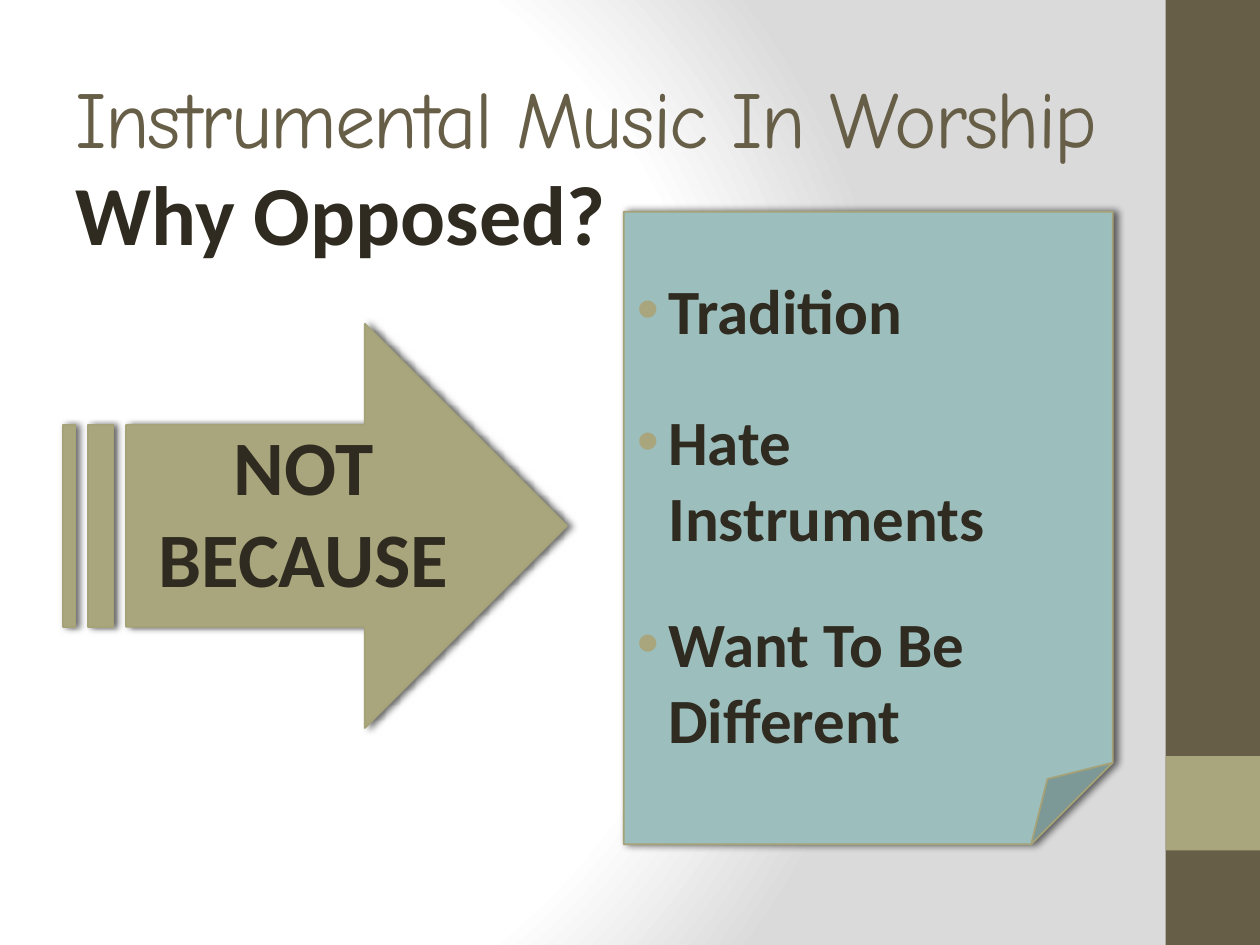
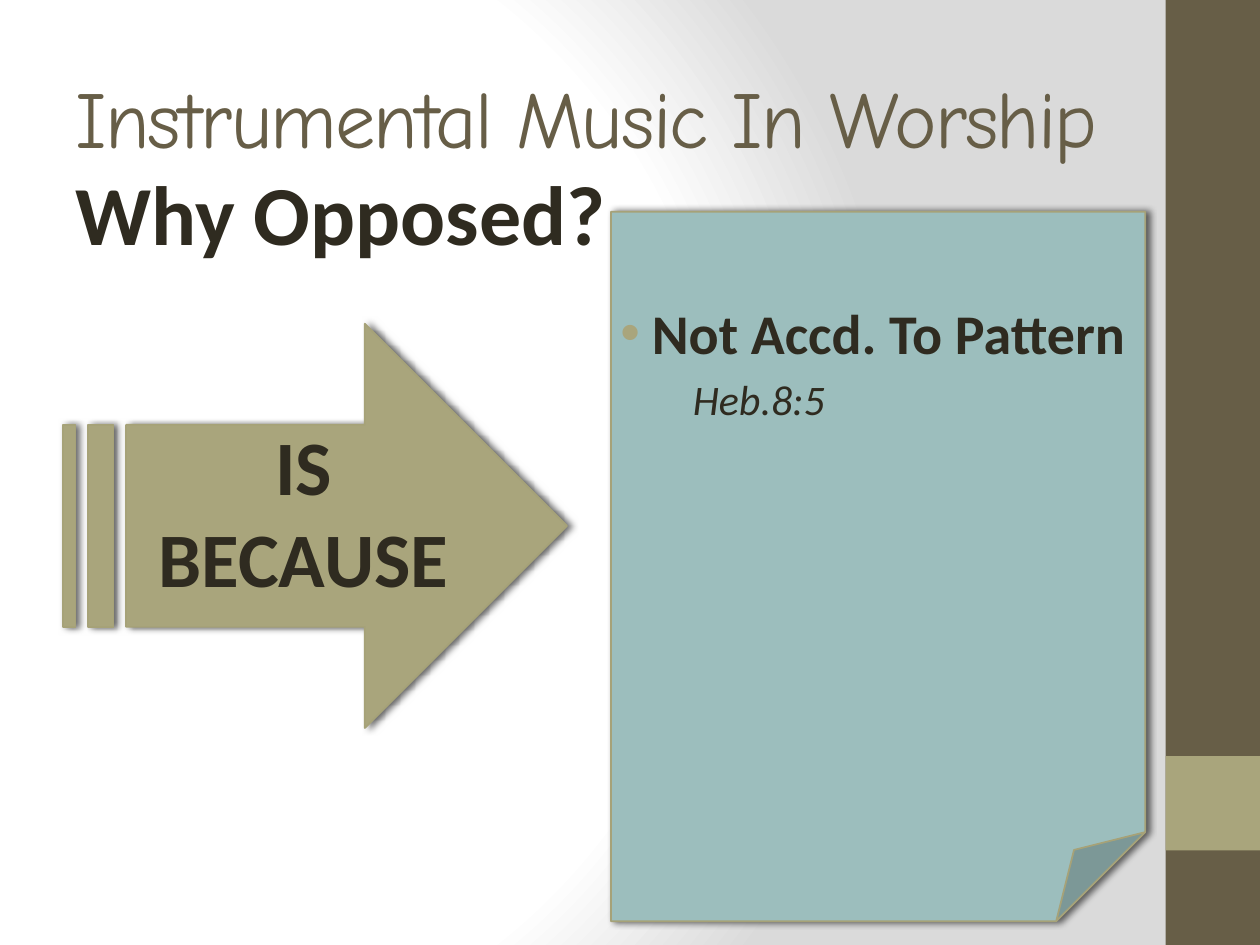
from lxml.etree import SubElement
from pptx import Presentation
from pptx.dml.color import RGBColor
from pptx.enum.shapes import MSO_SHAPE
from pptx.enum.text import MSO_ANCHOR, PP_ALIGN
from pptx.oxml import parse_xml
from pptx.oxml.ns import qn
from pptx.util import Pt

DARK_OLIVE = RGBColor(0x67, 0x5E, 0x47)
OLIVE = RGBColor(0xA9, 0xA5, 0x7C)
OUTLINE = RGBColor(0xA6, 0xA2, 0x78)
TEAL = RGBColor(0x9C, 0xBE, 0xBD)
INK = RGBColor(0x2F, 0x2B, 0x20)
BODY_FONT = "Calibri"
TITLE_FONT = "Comic Neue"

TITLE = "Instrumental Music In Worship"
QUESTION = "Why Opposed?"
SLIDES = [
    {
        "arrow": ["NOT", "BECAUSE"],
        "note": (356.4, 121, 279.4, 361.4),
        "reasons_box": (347.8, 121, 288, 361.4),
        "top_inset": 34,
        "reasons": [("Tradition", 36, 0), ("Hate Instruments", 36, 32),
                    ("Want To Be Different", 36, 29)],
        "reference": None,
    },
    {
        "arrow": ["IS", "BECAUSE"],
        "note": (349.2, 121, 305.3, 405.4),
        "reasons_box": (338.4, 121, 319, 405.4),
        "top_inset": 49.5,
        "reasons": [("Not Accd. To Pattern", 32, 0)],
        "reference": ("Heb.8:5", 24, 4.8),
    },
]

SLIDE_WIDTH, SLIDE_HEIGHT = 720, 540
BAND_WIDTH = 54
BAND_LEFT = SLIDE_WIDTH - BAND_WIDTH
BANDS = [((BAND_LEFT, 0, BAND_WIDTH, SLIDE_HEIGHT), DARK_OLIVE),
         ((BAND_LEFT, 432, BAND_WIDTH, BAND_WIDTH), OLIVE)]
TITLE_BOX = (36, 21.6, 600, 90)
QUESTION_BOX = (36, 88.6, 327.6, 65.5)
ARROW = (36, 185, 288, 231)
ARROW_TEXT_BOX = (72, 235.4, 203, 113.8)

DRAWING = 'xmlns:a="http://schemas.openxmlformats.org/drawingml/2006/main"'
GRADIENT_STOPS = [(0, "FFFFFF"), (75, "FFFFFF"), (100, "DADADA")]


def paint_background(slide):
    fill = slide.background.fill
    fill.gradient()
    gradient = slide.background._cSld.find(".//" + qn("a:gradFill"))
    stops = "".join(f'<a:gs pos="{pos * 1000}"><a:srgbClr val="{color}"/></a:gs>'
                    for pos, color in GRADIENT_STOPS)
    radial = parse_xml(
        f'<a:gradFill {DRAWING} rotWithShape="1"><a:gsLst>{stops}</a:gsLst>'
        '<a:path path="circle">'
        '<a:fillToRect l="20000" t="50000" r="100000" b="50000"/>'
        '</a:path></a:gradFill>')
    gradient.getparent().replace(gradient, radial)


def add_filled(slide, kind, box, color):
    shape = slide.shapes.add_shape(kind, *map(Pt, box))
    shape.shadow.inherit = False
    shape.fill.solid()
    shape.fill.fore_color.rgb = color
    shape.line.fill.background()
    return shape


def add_raised(slide, kind, box, color):
    shape = add_filled(slide, kind, box, color)
    shape.line.color.rgb = OUTLINE
    shape.line.width = Pt(1)
    effects = shape._element.spPr.find(qn("a:effectLst"))
    effects.append(parse_xml(
        f'<a:outerShdw {DRAWING} blurRad="{Pt(4)}" dist="{Pt(2)}" dir="0" rotWithShape="0">'
        '<a:srgbClr val="000000"><a:alpha val="60000"/></a:srgbClr></a:outerShdw>'))


def add_text(slide, box, lines, size, font=BODY_FONT, color=INK, bold=True):
    frame = slide.shapes.add_textbox(*map(Pt, box)).text_frame
    frame.word_wrap = True
    frame.text = "\n".join(lines)
    for paragraph in frame.paragraphs:
        style(paragraph, size, font, color, bold)
    return frame


def style(paragraph, size, font=BODY_FONT, color=INK, bold=True, italic=False):
    for run in paragraph.runs:
        run.font.size = Pt(size)
        run.font.name = font
        run.font.color.rgb = color
        run.font.bold = bold
        run.font.italic = italic


def indent(paragraph, left, hanging=0):
    properties = paragraph._p.get_or_add_pPr()
    properties.set("marL", str(Pt(left)))
    properties.set("indent", str(-Pt(hanging)))
    return properties


def add_bullet(paragraph):
    properties = indent(paragraph, 27, 18)
    SubElement(SubElement(properties, qn("a:buClr")), qn("a:srgbClr")).set("val", str(OLIVE))
    SubElement(properties, qn("a:buFont")).set("typeface", "Arial")
    SubElement(properties, qn("a:buChar")).set("char", "•")


def add_reasons(slide, content):
    reasons, reference = content["reasons"], content["reference"]
    entries = reasons + ([reference] if reference else [])
    frame = add_text(slide, content["reasons_box"], [text for text, _, _ in entries], 36)
    frame.margin_top = Pt(content["top_inset"])
    for paragraph, entry in zip(frame.paragraphs, entries):
        _, size, gap = entry
        is_reference = entry is reference
        if gap:
            paragraph.space_before = Pt(gap)
        if is_reference:
            indent(paragraph, 50.4)
        else:
            add_bullet(paragraph)
        style(paragraph, size, bold=not is_reference, italic=is_reference)


def add_title(slide):
    frame = add_text(slide, TITLE_BOX, [TITLE], 46, TITLE_FONT, DARK_OLIVE, False)
    frame.vertical_anchor = MSO_ANCHOR.MIDDLE
    frame.paragraphs[0].runs[0].font._element.set("spc", "-100")


def build_slide(presentation, content):
    slide = presentation.slides.add_slide(presentation.slide_layouts[6])
    paint_background(slide)
    for box, color in BANDS:
        add_filled(slide, MSO_SHAPE.RECTANGLE, box, color)
    add_raised(slide, MSO_SHAPE.FOLDED_CORNER, content["note"], TEAL)
    add_title(slide)
    add_reasons(slide, content)
    add_raised(slide, MSO_SHAPE.STRIPED_RIGHT_ARROW, ARROW, OLIVE)
    for paragraph in add_text(slide, ARROW_TEXT_BOX, content["arrow"], 44).paragraphs:
        paragraph.alignment = PP_ALIGN.CENTER
    add_text(slide, QUESTION_BOX, [QUESTION], 48)


def main():
    presentation = Presentation()
    presentation.slide_width = Pt(SLIDE_WIDTH)
    presentation.slide_height = Pt(SLIDE_HEIGHT)
    for content in SLIDES:
        build_slide(presentation, content)
    presentation.save("out.pptx")


if __name__ == "__main__":
    main()
